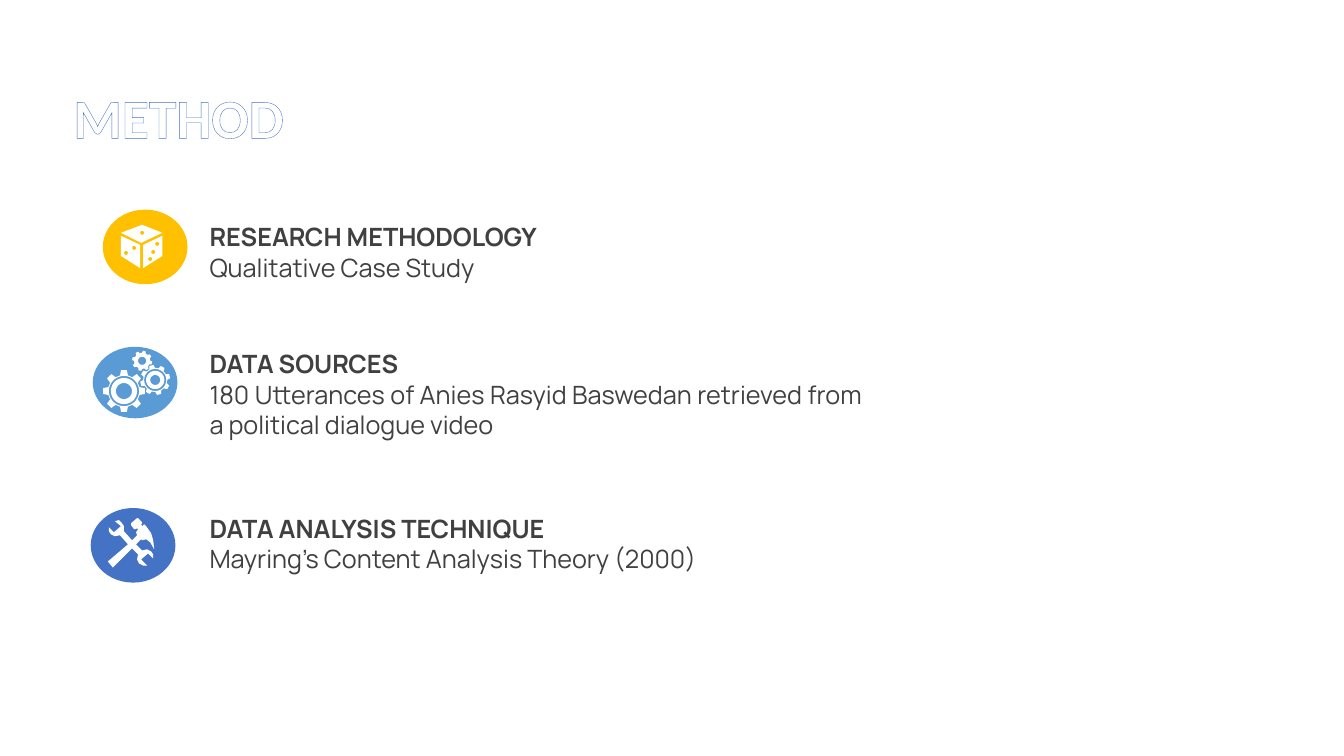
"""Build the METHOD slide: three research steps, each with a drawn icon."""
from math import cos, pi, radians, sin

from lxml import etree
from pptx import Presentation
from pptx.dml.color import RGBColor
from pptx.enum.shapes import MSO_SHAPE
from pptx.enum.text import MSO_ANCHOR, MSO_AUTO_SIZE, PP_ALIGN
from pptx.oxml.ns import qn
from pptx.util import Inches, Pt

OVAL = MSO_SHAPE.OVAL
MIDDLE = MSO_ANCHOR.MIDDLE
FIT = MSO_AUTO_SIZE.SHAPE_TO_FIT_TEXT
LEFT, JUSTIFY = PP_ALIGN.LEFT, PP_ALIGN.JUSTIFY
WHITE = RGBColor(0xFF, 0xFF, 0xFF)
GRAY = RGBColor(0x40, 0x40, 0x40)
BLUE = RGBColor(0x44, 0x72, 0xC4)
SKY = RGBColor(0x5B, 0x9B, 0xD5)
GOLD = RGBColor(0xFF, 0xC0, 0x00)
UNITS = 1000

TITLE = "METHOD"
TITLE_FORMAT = {"name": "Calibri", "size": Pt(39.6), "bold": True}
BODY_FORMAT = {"name": "Manrope", "size": Pt(18)}
STEPS = [
    ("RESEARCH METHODOLOGY", "Qualitative Case Study", LEFT,
     (1.98, 2.15, 6.67, 0.71), GOLD, (1.02, 2.08, 0.84, 0.74)),
    ("DATA SOURCES",
     "180 Utterances of Anies Rasyid Baswedan retrieved from a political dialogue video",
     JUSTIFY, (1.98, 3.41, 6.67, 1.01), SKY, (0.92, 3.44, 0.84, 0.71)),
    ("DATA ANALYSIS TECHNIQUE", "Mayring's Content Analysis Theory (2000)", LEFT,
     (1.98, 5.04, 6.67, 0.71), BLUE, (0.9, 5.04, 0.84, 0.74)),
]
DICE_FACES = [
    [(1.2, 2.34), (1.39, 2.43), (1.39, 2.66), (1.2, 2.54)],
    [(1.61, 2.34), (1.61, 2.54), (1.42, 2.66), (1.42, 2.43)],
    [(1.41, 2.23), (1.61, 2.31), (1.4, 2.41), (1.2, 2.31)],
]
DICE_PIPS = [(1.49, 2.57), (1.25, 2.51), (1.52, 2.5), (1.33, 2.46), (1.56, 2.42), (1.41, 2.31)]
PIP_RADIUS = 0.02
GEARS = [
    (1.23, 3.88, 0.21, 0.16, 0, (0.15, 0.13, 0.08)),
    (1.54, 3.77, 0.15, 0.12, -15, (0.11, 0.09, 0.05)),
    (1.41, 3.58, 0.1, 0.08, 13, (0.04,)),
]
TEETH = 8
TOOLS = [
    [(1.14, 5.17), (1.18, 5.16), (1.21, 5.19), (1.23, 5.22), (1.23, 5.27), (1.31, 5.36),
     (1.36, 5.31), (1.35, 5.28), (1.37, 5.25), (1.36, 5.24), (1.4, 5.2), (1.41, 5.22),
     (1.43, 5.2), (1.45, 5.22), (1.5, 5.29), (1.52, 5.36), (1.53, 5.45), (1.49, 5.38),
     (1.45, 5.35), (1.41, 5.36), (1.4, 5.35), (1.35, 5.4), (1.41, 5.46), (1.46, 5.45),
     (1.5, 5.47), (1.52, 5.5), (1.52, 5.54), (1.47, 5.49), (1.4, 5.55), (1.46, 5.61),
     (1.42, 5.61), (1.38, 5.59), (1.36, 5.55), (1.37, 5.5), (1.31, 5.44), (1.12, 5.63),
     (1.07, 5.57), (1.27, 5.4), (1.19, 5.31), (1.14, 5.32), (1.1, 5.3), (1.08, 5.27),
     (1.08, 5.23), (1.13, 5.28), (1.2, 5.22)],
    [(1.37, 5.14), (1.41, 5.18), (1.41, 5.19), (1.35, 5.25), (1.33, 5.25), (1.3, 5.21),
     (1.3, 5.19), (1.36, 5.14)],
]


def polar(cx, cy, radius, angle):
    return cx + radius * sin(angle), cy - radius * cos(angle)


def circle(cx, cy, radius, sides=36):
    return [polar(cx, cy, radius, 2 * pi * i / sides) for i in range(sides)]


def gear(cx, cy, tip, root, phase, rings):
    teeth = []
    for i in range(TEETH):
        middle = phase + i * 360 / TEETH
        for radius, offset in ((root, -14), (tip, -8), (tip, 8), (root, 14)):
            teeth.append(polar(cx, cy, radius, radians(middle + offset)))
    return [teeth] + [circle(cx, cy, r) for r in rings]


def paint(shape, color):
    shape.shadow.inherit = False
    shape.fill.solid()
    shape.fill.fore_color.rgb = color
    shape.line.fill.background()


def add_icon(s, outlines):
    scaled = [[(x * UNITS, y * UNITS) for x, y in outline] for outline in outlines]
    builder = s.shapes.build_freeform(*scaled[0][0], scale=Inches(1) / UNITS)
    for i, points in enumerate(scaled):
        if i:
            builder.move_to(*points[0])
        builder.add_line_segments(points[1:], close=True)
    paint(builder.convert_to_shape(), WHITE)


def add_text(p, text, color, formats):
    r = p.add_run()
    r.text = text
    for key, value in formats.items():
        setattr(r.font, key, value)
    r.font.color.rgb = color
    return r


def add_box(s, box):
    tf = s.shapes.add_textbox(*map(Inches, box)).text_frame
    tf.word_wrap = True
    return tf


def add_title(s):
    tf = add_box(s, (0.63, 0.88, 11.5, 0.63))
    tf.vertical_anchor = MIDDLE
    p = tf.paragraphs[0]
    p.line_spacing = 0.9
    r = add_text(p, TITLE, WHITE, TITLE_FORMAT)
    ln = etree.Element(qn("a:ln"), w=str(Pt(0.8)))
    fill = etree.SubElement(ln, qn("a:solidFill"))
    etree.SubElement(fill, qn("a:srgbClr"), val=str(BLUE))
    r.font._element.insert(0, ln)


def main():
    prs = Presentation()
    prs.slide_width, prs.slide_height = Inches(13.33), Inches(7.5)
    s = prs.slides.add_slide(prs.slide_layouts[6])
    add_title(s)
    icons = [
        DICE_FACES + [circle(x, y, PIP_RADIUS) for x, y in DICE_PIPS],
        [outline for parts in GEARS for outline in gear(*parts)],
        TOOLS,
    ]
    for (heading, detail, align, box, color, badge), icon in zip(STEPS, icons):
        paint(s.shapes.add_shape(OVAL, *map(Inches, badge)), color)
        add_icon(s, icon)
        tf = add_box(s, box)
        tf.auto_size = FIT
        add_text(tf.paragraphs[0], heading, GRAY, {**BODY_FORMAT, "bold": True})
        p = tf.add_paragraph()
        p.alignment = align
        add_text(p, detail, GRAY, {**BODY_FORMAT, "bold": False})
    prs.save("out.pptx")


if __name__ == "__main__":
    main()
